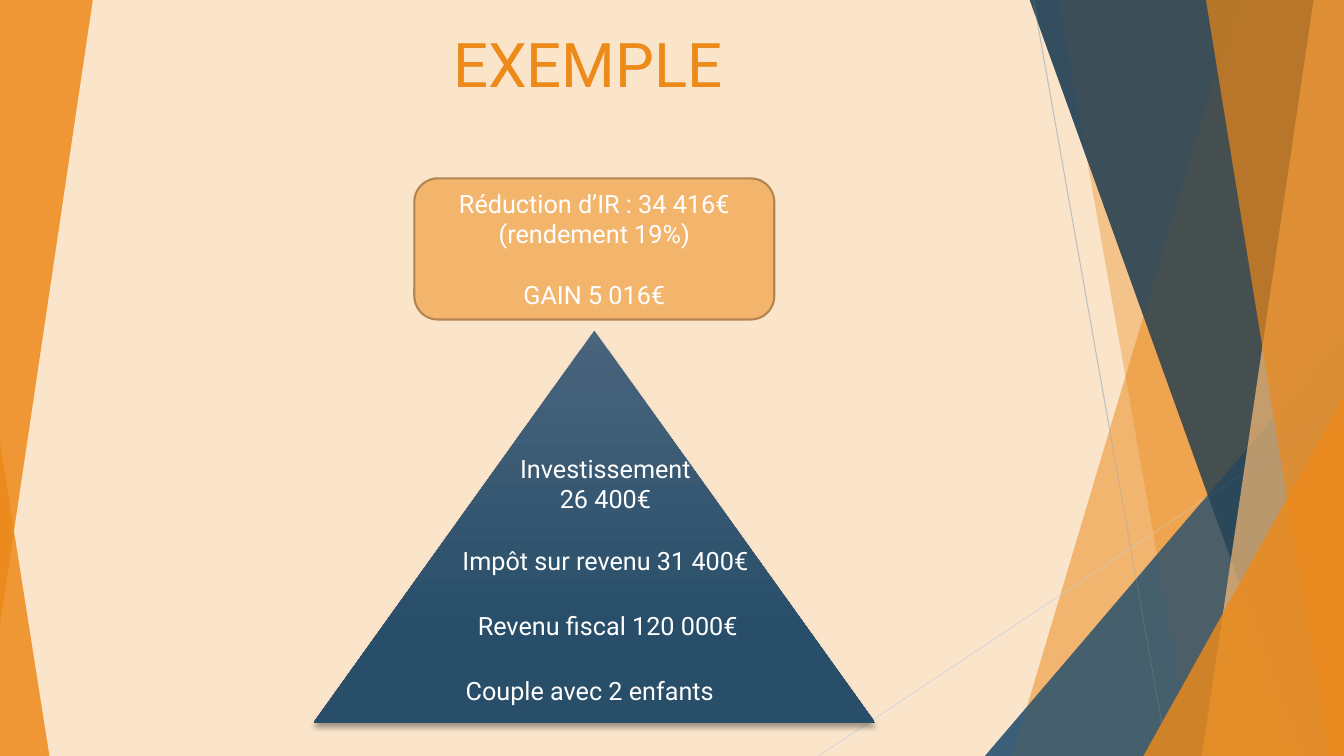
from dataclasses import dataclass
from typing import Any

from lxml.etree import SubElement
from pptx import Presentation
from pptx.dml.color import RGBColor
from pptx.enum.shapes import MSO_CONNECTOR, MSO_SHAPE
from pptx.enum.text import MSO_ANCHOR, PP_ALIGN
from pptx.oxml.ns import qn
from pptx.util import Inches, Pt

WIDTH, HEIGHT = 13.33, 7.5
ORANGE, WHITE = "EC8A1A", "FFFFFF"


@dataclass
class Ribbon:
    """Slanted band that runs to the right edge of the slide."""
    top_x: float
    bottom_x: float
    color: str
    opacity: int


@dataclass
class Corner:
    """Right-angled triangle; apex is 0 at its left and 1 at its right."""
    left: float
    top: float
    width: float
    height: float
    apex: int
    color: str
    opacity: int
    rotation: int = 0


@dataclass
class Ray:
    start_x: float
    start_y: float
    end_x: float
    color: str


@dataclass
class Label:
    text: str
    left: float
    top: float
    width: float
    height: float = 0.4
    alignment: Any = PP_ALIGN.CENTER


RIGHT_FACETS = [
    Ribbon(12.28, 10.04, ORANGE, 30),
    Ribbon(10.5, 11.83, ORANGE, 20),
    Corner(9.77, 3.33, 3.56, 4.17, 1, "2C5573", 72),
    Ribbon(10.21, 12.91, "214056", 70),
    Ribbon(13.03, 11.92, "F4B976", 70),
    Ribbon(11.96, 13.18, ORANGE, 65),
    Corner(11.34, 3.93, 1.99, 3.57, 1, ORANGE, 80),
]
DECORATION = [
    *RIGHT_FACETS,
    Corner(0, 4.39, 0.49, 3.11, 0, ORANGE, 85),
    Ray(10.25, 0, 11.58, "BFBFBF"),
    Ray(WIDTH, 4.03, 8.12, "D9D9D9"),
    *RIGHT_FACETS,
    Corner(0, 0, 0.92, 6.2, 1, ORANGE, 85, rotation=180),
]
LABELS = [
    Label("Couple avec 2 enfants", 4.52, 6.65, 3.13, alignment=PP_ALIGN.LEFT),
    Label("Revenu fiscal 120 000€", 4.64, 6.01, 2.89, alignment=PP_ALIGN.LEFT),
    Label("Impôt sur revenu 31 400€", 4.46, 5.36, 3.09),
    Label("Investissement 26 400€", 5.02, 4.45, 1.97, 0.71),
]


def rgb(color: str) -> RGBColor:
    return RGBColor.from_string(color)


def inches(*lengths: float) -> list[int]:
    return [Inches(length) for length in lengths]


def fill_facet(shape: Any, color: str, opacity: int) -> None:
    shape.shadow.inherit = False
    shape.fill.solid()
    shape.fill.fore_color.rgb = rgb(color)
    shape.line.fill.background()
    color_element = shape.fill._xPr.find(qn("a:solidFill"))[0]
    SubElement(color_element, qn("a:alpha"), val=str(opacity * 1000))


def draw_decoration(shapes: Any, part: Ribbon | Corner | Ray) -> None:
    if isinstance(part, Ray):
        ends = inches(part.start_x, part.start_y, part.end_x, HEIGHT)
        ray = shapes.add_connector(MSO_CONNECTOR.STRAIGHT, *ends)
        ray.line.color.rgb = rgb(part.color)
        ray.line.width = Pt(0.75)
        SubElement(ray._element.spPr, qn("a:effectLst"))
        return
    if isinstance(part, Ribbon):
        top = -0.01
        builder = shapes.build_freeform(*inches(part.top_x, top))
        corners = [(WIDTH, top), (WIDTH, HEIGHT), (part.bottom_x, HEIGHT)]
        builder.add_line_segments([inches(*corner) for corner in corners])
        shape = builder.convert_to_shape()
    else:
        frame = inches(part.left, part.top, part.width, part.height)
        shape = shapes.add_shape(MSO_SHAPE.ISOSCELES_TRIANGLE, *frame)
        shape.adjustments[0] = part.apex
        shape.rotation = part.rotation
    fill_facet(shape, part.color, part.opacity)


def write(para: Any, text: str, size: float = 18, color: str = WHITE,
          alignment: Any = PP_ALIGN.CENTER) -> None:
    para.alignment = alignment
    span = para.add_run()
    span.text = text
    for name, value in {"name": "Roboto", "size": Pt(size)}.items():
        setattr(span.font, name, value)
    span.font.color.rgb = rgb(color)


def draw_title(slide: Any) -> None:
    title = slide.shapes.title
    frame = inches(1.59, 0, 8.49, 1.04)
    for name, value in zip(("left", "top", "width", "height"), frame):
        setattr(title, name, value)
    title.text_frame.vertical_anchor = MSO_ANCHOR.BOTTOM
    write(title.text_frame.paragraphs[0], "EXEMPLE", 44, ORANGE)


def draw_pyramid(shapes: Any) -> None:
    pyramid = shapes.add_shape(MSO_SHAPE.ISOSCELES_TRIANGLE, *inches(3.11, 3.28, 5.57, 3.89))
    pyramid.fill.gradient()
    pyramid.fill.gradient_angle = 270
    for stop, (position, color) in zip(pyramid.fill.gradient_stops,
                                       [(0, "49647D"), (0.78, "284E69")]):
        stop.position = position
        stop.color.rgb = rgb(color)
    pyramid.line.fill.background()
    pyramid.shadow.inherit = False
    effects = pyramid._element.spPr.find(qn("a:effectLst"))
    shadow = SubElement(effects, qn("a:outerShdw"), blurRad=str(Pt(4)), dist=str(Pt(3)),
                        dir="5400000", rotWithShape="0")
    shadow_color = SubElement(shadow, qn("a:srgbClr"), val="000000")
    SubElement(shadow_color, qn("a:alpha"), val="35000")


def draw_label(shapes: Any, label: Label) -> None:
    box = shapes.add_textbox(*inches(label.left, label.top, label.width, label.height))
    box.text_frame.word_wrap = True
    write(box.text_frame.paragraphs[0], label.text, alignment=label.alignment)


def draw_result(shapes: Any) -> None:
    box = shapes.add_shape(MSO_SHAPE.ROUNDED_RECTANGLE, *inches(4.11, 1.77, 3.57, 1.4))
    box.shadow.inherit = False
    box.fill.solid()
    box.fill.fore_color.rgb = rgb("F3B46C")
    box.line.color.rgb = rgb("B48550")
    box.line.width = Pt(1.5)
    frame = box.text_frame
    frame.word_wrap = True
    frame.vertical_anchor = MSO_ANCHOR.MIDDLE
    write(frame.paragraphs[0], "Réduction d’IR : 34 416€ (rendement 19%)")
    gain = frame.add_paragraph()
    gain.space_before = Pt(22)
    write(gain, "GAIN 5 016€")


def main() -> None:
    deck = Presentation()
    deck.slide_width, deck.slide_height = inches(WIDTH, HEIGHT)
    page = deck.slides.add_slide(deck.slide_layouts.get_by_name("Title Only"))
    page.background.fill.solid()
    page.background.fill.fore_color.rgb = rgb("FAE4CA")
    for part in DECORATION:
        draw_decoration(page.shapes, part)
    draw_title(page)
    draw_pyramid(page.shapes)
    for label in LABELS:
        draw_label(page.shapes, label)
    draw_result(page.shapes)
    deck.save("out.pptx")


if __name__ == "__main__":
    main()
